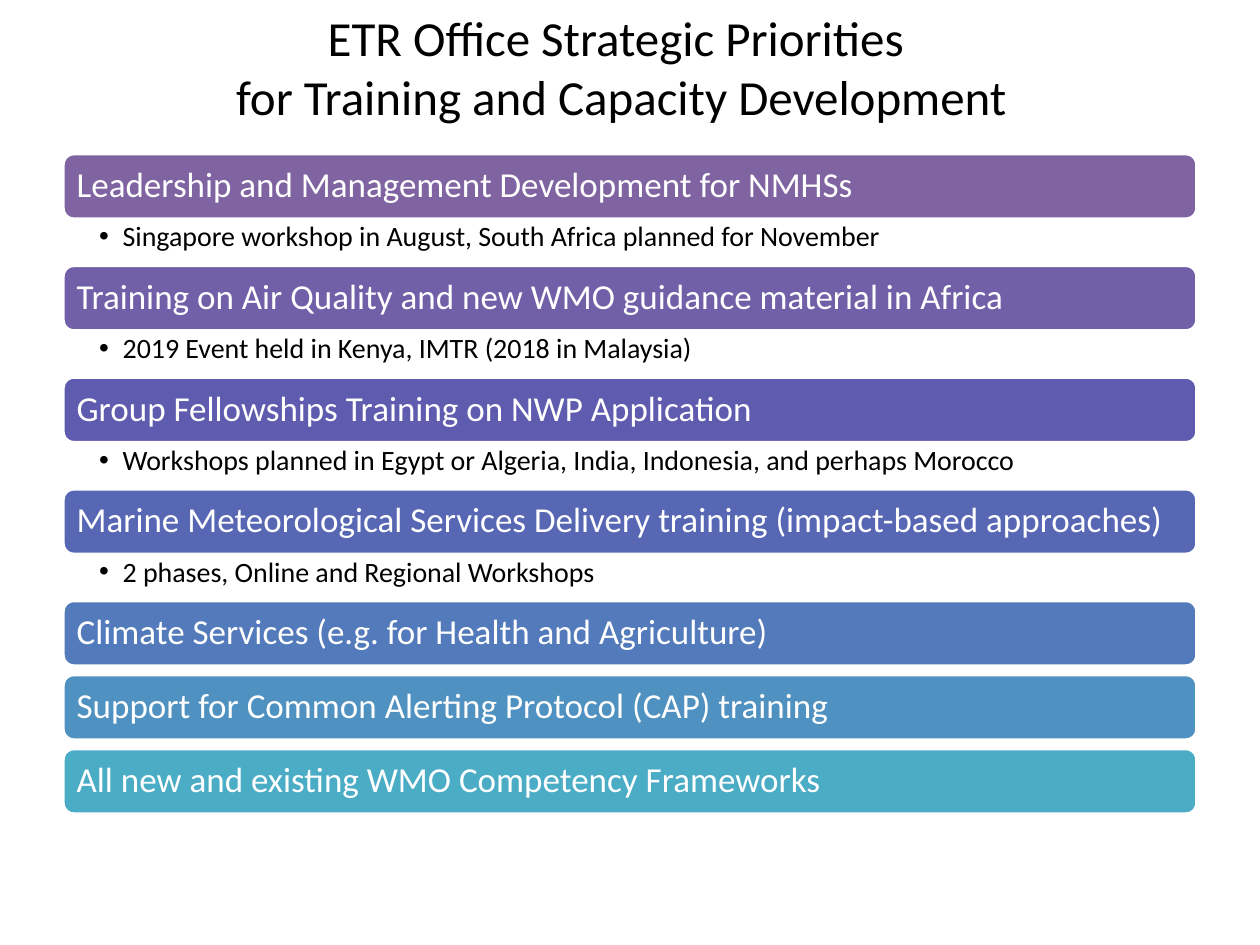
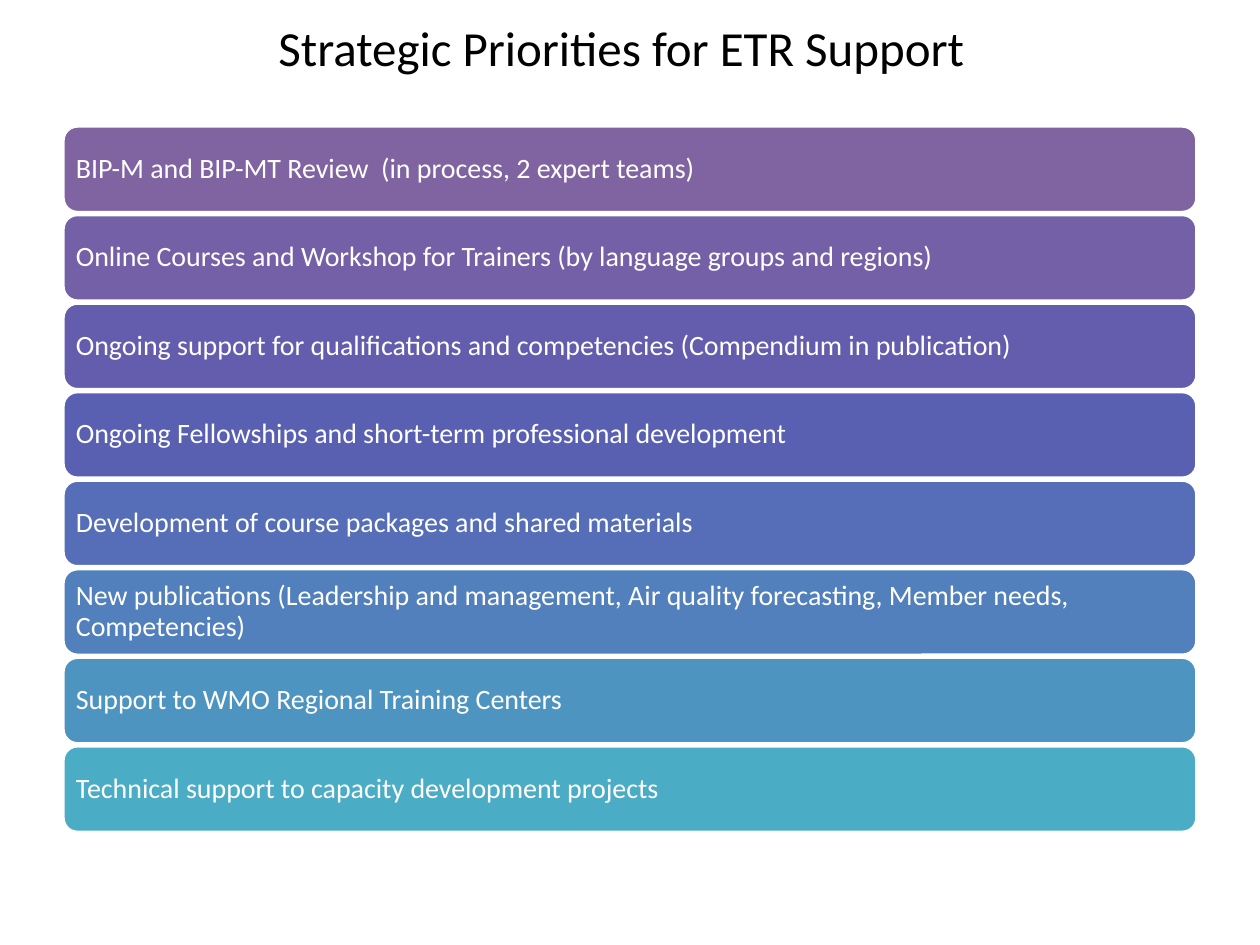
from dataclasses import dataclass

from lxml import etree
from pptx import Presentation
from pptx import util as u
from pptx.dml.color import RGBColor
from pptx.enum import shapes, text
from pptx.oxml.ns import qn


@dataclass(frozen=True)
class Theme:
    font: str = "Calibri"
    ink: str = "000000"
    paper: str = "FFFFFF"
    title_size: int = 28
    priority_size: int = 20
    body_size: int = 16
    left: float = 36
    width: float = 648
    border: float = 2


theme = Theme()


def style(p, size, color, align):
    p.alignment = align
    for r in p.runs:
        r.font.name = theme.font
        r.font.size = u.Pt(size)
        r.font.color.rgb = RGBColor.from_string(color)


def add_bar(s, words, top, height, fill, size, inset):
    sp = s.shapes.add_shape(shapes.MSO_SHAPE.ROUNDED_RECTANGLE, u.Pt(theme.left),
                            u.Pt(top), u.Pt(theme.width), u.Pt(height))
    sp.shadow.inherit = False
    sp.fill.solid()
    sp.fill.fore_color.rgb = RGBColor.from_string(fill)
    sp.line.color.rgb = RGBColor.from_string(theme.paper)
    sp.line.width = u.Pt(theme.border)
    tf = sp.text_frame
    tf.word_wrap = True
    tf.vertical_anchor = text.MSO_ANCHOR.MIDDLE
    tf.margin_left = tf.margin_right = tf.margin_top = tf.margin_bottom = u.Pt(inset)
    tf.text = words
    p = tf.paragraphs[0]
    p.line_spacing = 0.9
    style(p, size, theme.paper, text.PP_ALIGN.LEFT)


# Slide content: each bar has a fill, a heading and an optional detail
slides = [
    dict(
        title="ETR Office Strategic Priorities \vfor Training and Capacity Development",
        title_top=23, top=87.8, height=37.44, gap=4.86,
        size=theme.priority_size, inset=6,
        bars=[
            ("8064A2", "Leadership and Management Development for NMHSs",
             "Singapore workshop in August, South Africa planned for November"),
            ("7160A8", "Training on Air Quality and new WMO guidance material in Africa",
             "2019 Event held in Kenya, IMTR (2018 in Malaysia)"),
            ("5F5BAE", "Group Fellowships Training on NWP Application",
             "Workshops planned in Egypt or Algeria, India, Indonesia, and perhaps Morocco"),
            ("5767B4", "Marine Meteorological Services Delivery training (impact-based approaches)",
             "2 phases, Online and Regional Workshops"),
            ("537ABA", "Climate Services (e.g. for Health and Agriculture)", None),
            ("4F91C0", "Support for Common Alerting Protocol (CAP) training", None),
            ("4BACC6", "All new and existing WMO Competency Frameworks", None),
        ]),
    dict(
        title="Strategic Priorities for ETR Support",
        title_top=12.2, top=72, height=49.5, gap=1.1,
        size=theme.body_size, inset=5,
        bars=[
            ("8064A2", "BIP-M and BIP-MT Review  (in process, 2 expert teams)", None),
            ("7460A7", "Online Courses and Workshop for Trainers (by language groups and regions)", None),
            ("645DAD", "Ongoing support for qualifications and competencies (Compendium in publication)", None),
            ("5960B2", "Ongoing Fellowships and short-term professional development", None),
            ("556EB7", "Development of course packages and shared materials", None),
            ("5280BC", "New publications (Leadership and management, Air quality forecasting, "
                       "Member needs, Competencies)", None),
            ("4E94C1", "Support to WMO Regional Training Centers", None),
            ("4BACC6", "Technical support to capacity development projects", None),
        ]),
]
detail_height = 26.4
bullet_indent = 13.5

prs = Presentation()
prs.slide_width, prs.slide_height = u.Pt(720), u.Pt(540)

for content in slides:
    s = prs.slides.add_slide(prs.slide_layouts[6])

    # Title
    sp = s.shapes.add_textbox(u.Pt(13), u.Pt(content["title_top"]), u.Pt(684), u.Pt(29.5))
    tf = sp.text_frame
    tf.word_wrap = True
    tf.vertical_anchor = text.MSO_ANCHOR.MIDDLE
    tf.text = content["title"]
    style(tf.paragraphs[0], theme.title_size, theme.ink, text.PP_ALIGN.CENTER)

    # Bars, stacked downwards
    top = content["top"]
    for fill, heading, detail in content["bars"]:
        add_bar(s, heading, top, content["height"], fill, content["size"], content["inset"])
        top += content["height"]
        if not detail:
            top += content["gap"]
            continue

        # Bulleted detail fills the space down to the next bar
        sp = s.shapes.add_textbox(u.Pt(theme.left), u.Pt(top), u.Pt(theme.width),
                                  u.Pt(detail_height))
        tf = sp.text_frame
        tf.word_wrap = True
        tf.margin_left, tf.margin_right = u.Pt(20.6), u.Pt(11.4)
        tf.margin_top = tf.margin_bottom = u.Pt(2)
        tf.text = detail
        p = tf.paragraphs[0]
        p.line_spacing = 0.9
        pPr = p._p.get_or_add_pPr()
        pPr.set("marL", str(u.Pt(bullet_indent)))
        pPr.set("indent", str(-u.Pt(bullet_indent)))
        etree.SubElement(pPr, qn("a:buFont")).set("typeface", "Arial")
        etree.SubElement(pPr, qn("a:buChar")).set("char", "•")
        style(p, theme.body_size, theme.ink, text.PP_ALIGN.LEFT)
        top += detail_height

prs.save("out.pptx")
